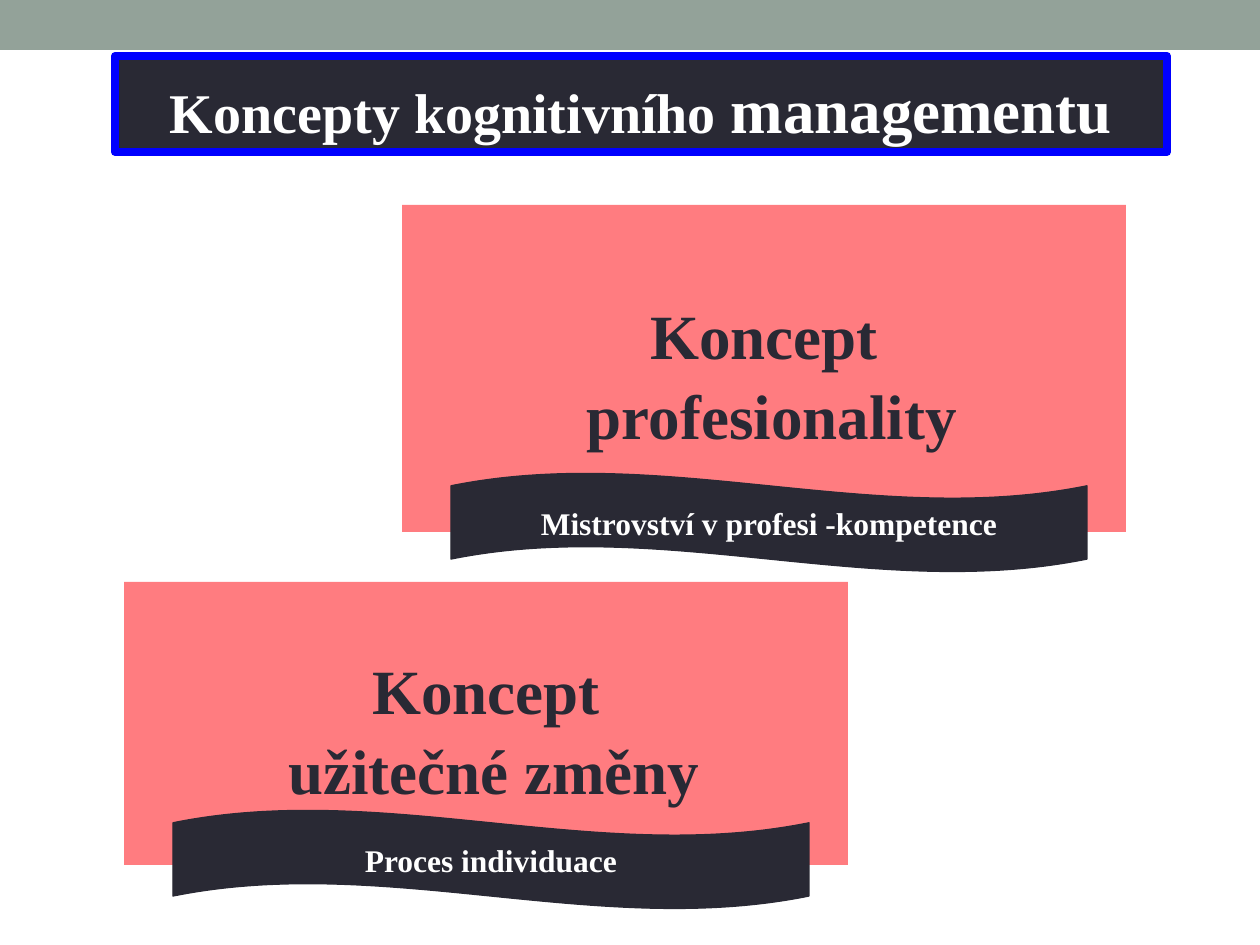
import pptx
import pptx.util
import pptx.dml.color
import pptx.enum.shapes
import pptx.enum.text
from dataclasses import dataclass

PX = 914400 // 126
SHAPES = pptx.enum.shapes.MSO_SHAPE
ANCHOR = pptx.enum.text.MSO_ANCHOR


@dataclass(frozen=True)
class Theme:
    font: str = "Times New Roman"
    band: str = "93A299"
    panel: str = "FF7C80"
    dark: str = "292934"
    light: str = "FFFFFF"
    frame: str = "0000FF"
    large: int = 36
    title: int = 32
    small: int = 18


theme = Theme()


def add_block(kind, left, top, width, height, fill, line=None, weight=0.75):
    box = page.shapes.add_shape(kind, left * PX, top * PX, width * PX, height * PX)
    box.shadow.inherit = False
    box.fill.solid()
    box.fill.fore_color.rgb = pptx.dml.color.RGBColor.from_string(fill)
    if line:
        box.line.color.rgb = pptx.dml.color.RGBColor.from_string(line)
        box.line.width = pptx.util.Pt(weight)
    else:
        box.line.fill.background()
    return box


def write(box, *lines, color, anchor=ANCHOR.MIDDLE, wrap=False, hang=0, top=6, pitch=1.0):
    """Each line is a list of (text, size) spans."""
    frame = box.text_frame
    frame.word_wrap = wrap
    frame.vertical_anchor = anchor
    frame.margin_top = top * PX
    frame.margin_bottom = 6 * PX
    for number, spans in enumerate(lines):
        para = frame.add_paragraph() if number else frame.paragraphs[0]
        para.alignment = pptx.enum.text.PP_ALIGN.CENTER
        para.line_spacing = pitch
        if hang:
            properties = para._p.get_or_add_pPr()
            properties.set("marL", str(hang * PX))
            properties.set("indent", str(-hang * PX))
        for text, size in spans:
            span = para.add_run()
            span.text = text
            span.font.name = theme.font
            span.font.size = pptx.util.Pt(size)
            span.font.bold = True
            span.font.color.rgb = pptx.dml.color.RGBColor.from_string(color)


deck = pptx.Presentation()
deck.slide_width = 1260 * PX
deck.slide_height = 945 * PX
page = deck.slides.add_slide(deck.slide_layouts[6])

# Top band
add_block(SHAPES.RECTANGLE, 0, 0, 1260, 50, theme.band)

# Concept panels
concepts = [
    (402, 205, 327, 473, " profesionality", "Mistrovství v profesi -kompetence"),
    (124, 582, 283, 810, " užitečné změny", "Proces individuace"),
]
for left, top, height, ribbon_top, name, note in concepts:
    panel = add_block(SHAPES.RECTANGLE, left, top, 724, height, theme.panel)
    write(panel, [("Koncept", theme.large)], [(name, theme.large)],
          color=theme.dark, hang=47, top=14, pitch=1.05)

# Title
title = add_block(SHAPES.RECTANGLE, 115, 56, 1052, 96, theme.dark, theme.frame, 4.5)
write(title, [("Koncepty kognitivního ", theme.title), ("managementu", theme.large)],
      color=theme.light, anchor=ANCHOR.TOP, wrap=True, top=15)

# Wavy ribbons over the lower edge of each panel
for left, top, height, ribbon_top, name, note in concepts:
    ribbon = add_block(SHAPES.WAVE, left + 49, ribbon_top, 636, 99, theme.dark, theme.dark)
    ribbon.adjustments[0] = 0.13
    ribbon.adjustments[1] = 0
    write(ribbon, [(note, theme.small)], color=theme.light)

deck.save("out.pptx")
